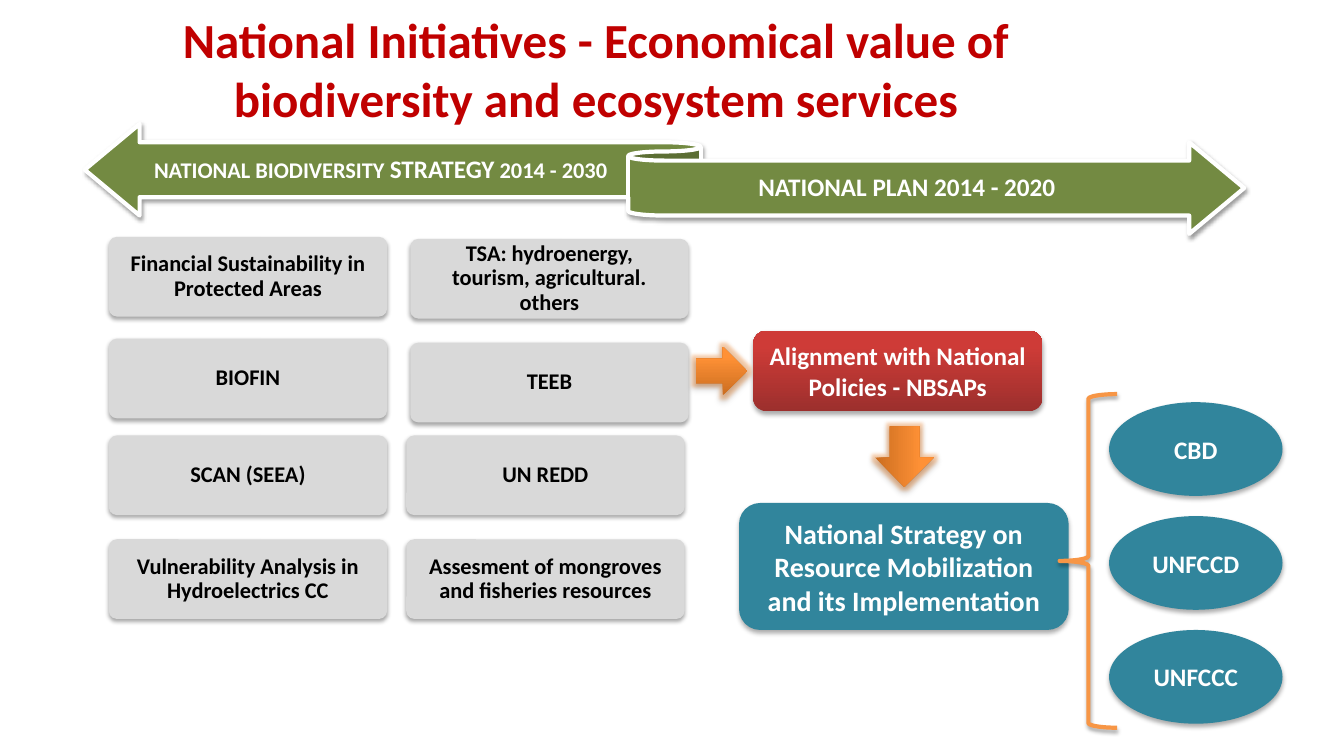
from lxml import etree
from pptx import Presentation
from pptx.dml.color import RGBColor
from pptx.enum.shapes import MSO_SHAPE as Preset
from pptx.enum.text import MSO_ANCHOR as Anchor, MSO_AUTO_SIZE as AutoSize, PP_ALIGN as Align
from pptx.oxml.ns import qn
from pptx.util import Inches, Pt

WHITE, BLACK, GREY = "FFFFFF", "000000", "D9D9D9"
RED, GREEN, TEAL, ORANGE = "C00000", "738A42", "31859C", "F79646"
RED_FADE, ORANGE_FADE = ("9C2F2D", "CE3B37"), ("CC6E20", "FF9136")
CARD_SHADOW, DEEP_SHADOW, RIBBON_SHADOW = (35, 3.1, 1.8), (32, 3.5, 2.2), (38, 3.1, 1.6)
CARD_SIZE = (2.76, 0.79)
CARDS = [
    (1.08, 2.35, "Financial Sustainability in Protected Areas"),
    (1.08, 3.36, "BIOFIN"),
    (1.08, 4.32, "SCAN (SEEA)"),
    (1.08, 5.35, "Vulnerability Analysis in Hydroelectrics CC"),
    (4.07, 2.37, "TSA: hydroenergy, tourism, agricultural. others"),
    (4.07, 3.4, "TEEB"),
    (4.03, 4.32, "UN REDD"),
    (4.03, 5.35, "Assesment of mongroves and fisheries resources"),
]
CONVENTIONS = ["CBD", "UNFCCD", "UNFCCC"]


def color(value):
    """Turn a hex string into a colour."""
    return RGBColor.from_string(value)


def add_effect(parent, tag, value, alpha, **sizes):
    """Add one coloured effect to an effect list."""
    effect = etree.SubElement(parent, qn(tag), {key: str(size) for key, size in sizes.items()})
    tint = etree.SubElement(effect, qn("a:srgbClr"), val=value)
    etree.SubElement(tint, qn("a:alpha"), val=str(alpha * 1000))


def set_shadow(shape, shadow, glow=None):
    """Give a shape a soft shadow below it and, if asked, a glow."""
    shape.shadow.inherit = False
    effects = shape._element.spPr.find(qn("a:effectLst"))
    if glow:
        add_effect(effects, "a:glow", glow, 40, rad=Pt(5))
    alpha, blur, distance = shadow
    add_effect(effects, "a:outerShdw", BLACK, alpha, blurRad=Pt(blur), dist=Pt(distance),
               dir=5400000, rotWithShape=0)


def add_block(page, preset, box, fill, shadow, line=None, glow=None):
    """Draw a preset shape with a plain fill, a two-colour fade or no fill."""
    shape = page.shapes.add_shape(preset, *map(Inches, box))
    if isinstance(fill, tuple):
        shape.fill.gradient()
        shape.fill.gradient_angle = 90
        for stop, value, position in zip(shape.fill.gradient_stops, fill, (0, 0.8)):
            stop.color.rgb = color(value)
            stop.position = position
    elif fill:
        shape.fill.solid()
        shape.fill.fore_color.rgb = color(fill)
    else:
        shape.fill.background()
    if line:
        shape.line.color.rgb = color(line)
        shape.line.width = Pt(3)
    else:
        shape.line.fill.background()
    set_shadow(shape, shadow, glow)
    return shape


def write(shape, spans, value=WHITE, spacing=1.0, inset=(0.1, 0.05)):
    """Write one centred bold paragraph of (text, size) spans into a shape."""
    frame = shape.text_frame
    side, edge = map(Inches, inset)
    layout = {"word_wrap": True, "auto_size": AutoSize.NONE, "vertical_anchor": Anchor.MIDDLE,
              "margin_left": side, "margin_right": side, "margin_top": edge, "margin_bottom": edge}
    for name, setting in layout.items():
        setattr(frame, name, setting)
    para = frame.paragraphs[0]
    para.alignment, para.line_spacing = Align.CENTER, spacing
    for text, size in spans:
        span = para.add_run()
        span.text = text
        for name, setting in {"name": "Calibri", "size": Pt(size), "bold": True}.items():
            setattr(span.font, name, setting)
        span.font.color.rgb = color(value)


def add_title(page, box):
    """Place the slide title."""
    title = page.shapes.title
    for name, length in zip(("left", "top", "width", "height"), box):
        setattr(title, name, Inches(length))
    write(title, [("National Initiatives - Economical value of biodiversity and ecosystem services", 35)], RED)


def add_ribbon(page, box):
    """Draw the two-way ribbon with a label on each half."""
    left, top, width, height = box
    add_block(page, Preset.LEFT_RIGHT_RIBBON, box, GREEN, RIBBON_SHADOW, line=WHITE)
    strategy = [("NATIONAL BIODIVERSITY ", 16), ("STRATEGY", 18), (" 2014 - 2030", 16)]
    plan = [("NATIONAL PLAN 2014 - 2020", 18)]
    for shift, drop, span_width, spans in ((0.63, 0.19, 4.61, strategy), (5.98, 0.37, 4.35, plan)):
        label = page.shapes.add_textbox(*map(Inches, (left + shift, top + drop, span_width, 0.54)))
        write(label, spans, spacing=0.9, inset=(0, 0.07))


def add_cards(page):
    """Draw the grey cards of the national initiatives."""
    for left, top, text in CARDS:
        card = add_block(page, Preset.ROUNDED_RECTANGLE, (left, top, *CARD_SIZE), GREY, CARD_SHADOW)
        card.adjustments[0] = 0.1
        write(card, [(text, 16)], BLACK, 0.9, (0.13, 0.09))


def add_flow(page, box):
    """Draw the steps from the initiatives to the mobilization strategy."""
    left, top, width, height = box
    policies = add_block(page, Preset.ROUNDED_RECTANGLE, (left + 0.14, top, 2.87, 0.8), RED_FADE, DEEP_SHADOW)
    write(policies, [("Alignment with National Policies - NBSAPs", 18)])
    strategy = add_block(page, Preset.ROUNDED_RECTANGLE, (left, top + height - 1.26, width, 1.26),
                         TEAL, DEEP_SHADOW)
    write(strategy, [("National Strategy on Resource Mobilization and its Implementation", 20)])
    for shift, drop, size, turn in ((-0.43, 0.16, (0.51, 0.48), 0), (1.34, 0.96, (0.6, 0.58), 90)):
        arrow = add_block(page, Preset.RIGHT_ARROW, (left + shift, top + drop, *size),
                          ORANGE_FADE, DEEP_SHADOW, glow=ORANGE)
        arrow.rotation = turn


def add_conventions(page, box):
    """Draw the brace and the column of conventions."""
    left, top, width, height = box
    for index, name in enumerate(CONVENTIONS):
        oval = add_block(page, Preset.OVAL, (left + 0.49, top + 0.08 + 1.13 * index, 1.72, 0.93),
                         TEAL, DEEP_SHADOW)
        write(oval, [(name, 18)])
    add_block(page, Preset.LEFT_BRACE, (left, top, 0.57, height), None, CARD_SHADOW, line=ORANGE)


def main():
    """Build the slide and save it."""
    deck = Presentation()
    deck.slide_width, deck.slide_height = Inches(13.33), Inches(7.5)
    page = deck.slides.add_slide(deck.slide_layouts[5])
    add_title(page, (0.52, 0.21, 10.79, 0.94))
    add_cards(page)
    add_flow(page, (7.33, 3.28, 3.27, 2.97))
    add_ribbon(page, (0.84, 1.23, 11.5, 1.09))
    add_conventions(page, (10.51, 3.91, 2.21, 3.31))
    deck.save("out.pptx")


if __name__ == "__main__":
    main()
